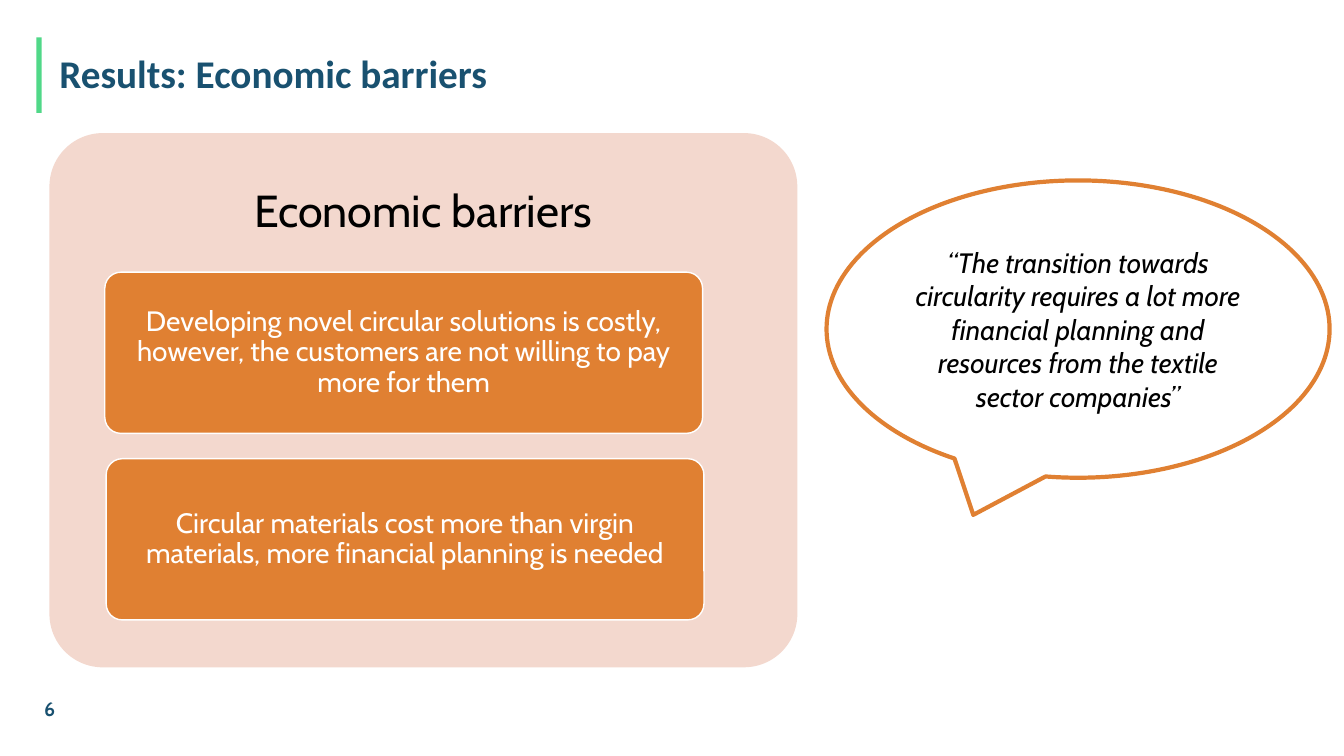
from pptx import Presentation
from pptx.dml.color import RGBColor
from pptx.enum.shapes import MSO_SHAPE
from pptx.enum.text import MSO_ANCHOR, PP_ALIGN
from pptx.util import Inches, Pt

RECT, ROUNDED = MSO_SHAPE.RECTANGLE, MSO_SHAPE.ROUNDED_RECTANGLE
CALLOUT = MSO_SHAPE.OVAL_CALLOUT
MIDDLE = MSO_ANCHOR.MIDDLE
LEFT, CENTER = PP_ALIGN.LEFT, PP_ALIGN.CENTER

THEME = {
    "navy": RGBColor.from_string("195170"),
    "green": RGBColor.from_string("50D888"),
    "peach": RGBColor.from_string("F3D8CE"),
    "orange": RGBColor.from_string("E08032"),
    "white": RGBColor.from_string("FFFFFF"),
    "black": RGBColor.from_string("000000"),
    "heading_font": "Calibri",
    "body_font": "Cabin",
    "title": Pt(28),
    "panel": Pt(32),
    "body": Pt(20),
    "number": Pt(14),
}

prs = Presentation()
prs.slide_width, prs.slide_height = Inches(13.33), Inches(7.5)
slide = prs.slides.add_slide(prs.slide_layouts[6])


def grid(left, top, width, height):
    """Turn percentages of the slide's width and height into lengths."""
    col, row = prs.slide_width / 100, prs.slide_height / 100
    return [int(n) for n in (left * col, top * row, width * col, height * row)]


def write(holder, text, size, color, font="body_font", align=CENTER,
          spacing=0.9, inset=(0.1, 0.05), bold=False, italic=False):
    frame = holder.text_frame
    frame.word_wrap = True
    frame.vertical_anchor = MIDDLE
    frame.margin_left = frame.margin_right = Inches(inset[0])
    frame.margin_top = frame.margin_bottom = Inches(inset[1])
    paragraph = frame.paragraphs[0]
    paragraph.alignment = align
    paragraph.line_spacing = spacing
    run = paragraph.add_run()
    run.text = text
    run.font.name = THEME[font]
    run.font.size = THEME[size]
    run.font.color.rgb = THEME[color]
    run.font.bold, run.font.italic = bold, italic


# Backgrounds: the title's accent, the panel, two barrier cards and the quote
PANEL_LEFT, PANEL_TOP, PANEL_WIDTH = 3.68, 17.6, 55.65
CARD_LEFT, CARD_TOP, CARD_STEP, CARD_SHIFT = 7.8, 36, 24.67, 0.1
barriers = [
    "Developing novel circular solutions is costly, however, the customers "
    "are not willing to pay more for them",
    "Circular materials cost more than virgin materials, more financial "
    "planning is needed",
]
outlines = [
    (RECT, (2.7, 4.93, 0.4, 10), "green", None, 0),
    (ROUNDED, (PANEL_LEFT, PANEL_TOP, PANEL_WIDTH, 70.67), "peach", None, 0),
]
for i in range(len(barriers)):
    place = (CARD_LEFT + i * CARD_SHIFT, CARD_TOP + i * CARD_STEP, 44.48, 21.33)
    outlines.append((ROUNDED, place, "orange", "white", 1))
outlines.append((CALLOUT, (61.5, 23.87, 37.43, 39.33), "white", "orange", 3))

drawn = []
for kind, place, fill, line, weight in outlines:
    shape = slide.shapes.add_shape(kind, *grid(*place))
    shape.shadow.inherit = False
    shape.fill.solid()
    shape.fill.fore_color.rgb = THEME[fill]
    if line:
        shape.line.color.rgb = THEME[line]
        shape.line.width = Pt(weight)
    else:
        shape.line.fill.background()
    if kind == ROUNDED:
        shape.adjustments[0] = 0.1
    drawn.append(shape)
accent, panel, *cards, quote = drawn

# Wording
title = slide.shapes.add_textbox(*grid(PANEL_LEFT, 4.93, 86.25, 10.13))
write(title, "Results: Economic barriers", "title", "navy",
      font="heading_font", align=LEFT, bold=True)

panel_heading = slide.shapes.add_textbox(
    *grid(PANEL_LEFT, PANEL_TOP, PANEL_WIDTH, 21.2))
write(panel_heading, "Economic barriers", "panel", "black", inset=(0.13, 0.13))

for card, barrier in zip(cards, barriers):
    write(card, barrier, "body", "white", inset=(0.06, 0.04))

write(quote, "“The transition towards circularity requires a lot more financial "
      "planning and resources from the textile sector companies”",
      "body", "black", spacing=1.0, italic=True)

page_number = slide.shapes.add_textbox(*grid(2.55, 91.07, 22.5, 5.33))
write(page_number, "6", "number", "navy", align=LEFT, spacing=1.0, bold=True)

prs.save("out.pptx")
